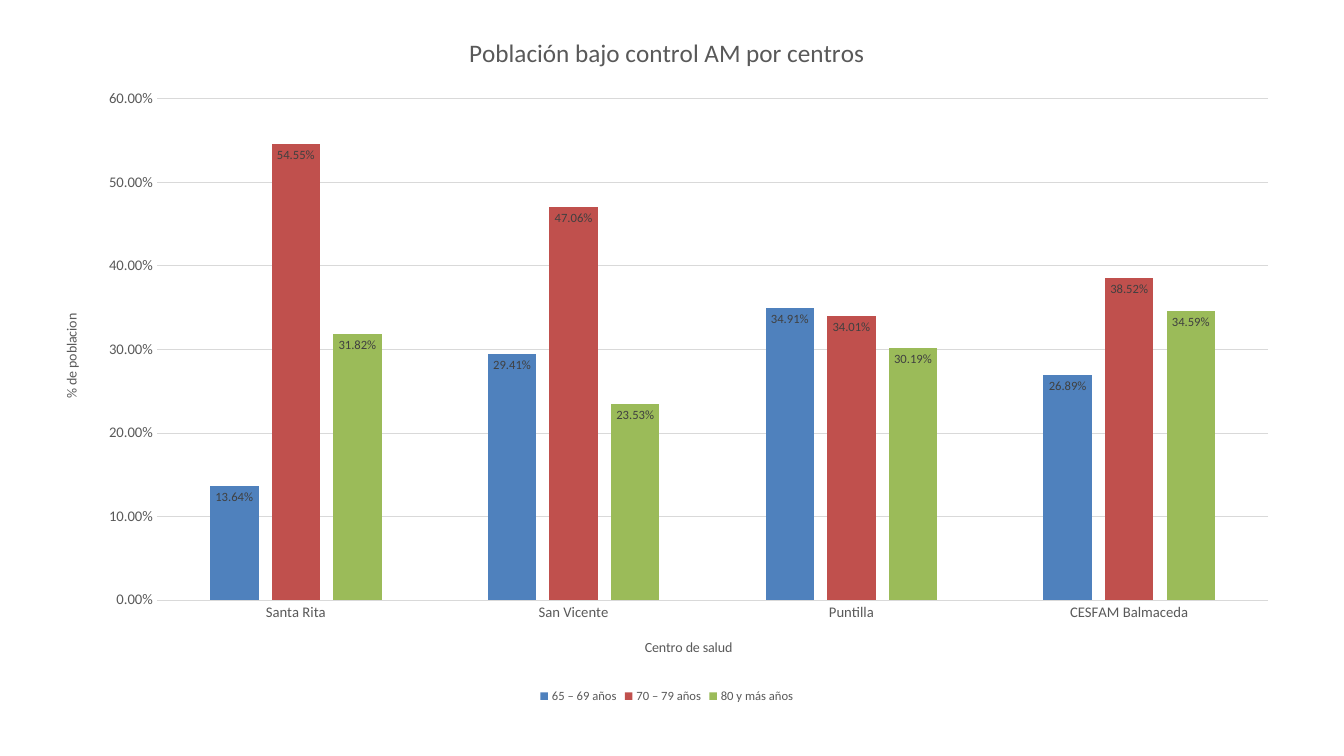
"""Build the slide charting the older adult population under control by health centre."""
from dataclasses import dataclass

from lxml.etree import SubElement
from pptx import Presentation
from pptx.chart.chart import Chart
from pptx.chart.data import CategoryChartData
from pptx.dml.color import RGBColor
from pptx.enum.chart import (
    XL_CHART_TYPE as ChartType,
    XL_LABEL_POSITION as LabelPosition,
    XL_LEGEND_POSITION as LegendPosition,
    XL_TICK_MARK as TickMark,
)
from pptx.oxml.ns import qn
from pptx.text.text import Font, TextFrame
from pptx.util import Cm, Pt

BLUE = RGBColor(0x4F, 0x81, 0xBD)
RED = RGBColor(0xC0, 0x50, 0x4D)
GREEN = RGBColor(0x9B, 0xBB, 0x59)
BLACK = RGBColor(0x00, 0x00, 0x00)
DARK_GREY = RGBColor(0x40, 0x40, 0x40)
GREY = RGBColor(0x59, 0x59, 0x59)
LIGHT_GREY = RGBColor(0xD9, 0xD9, 0xD9)
TYPEFACE = "Calibri"
PERCENT = "0.00%"


@dataclass(frozen=True)
class AgeGroup:
    name: str
    shares: tuple[float, ...]
    color: RGBColor


CENTRES = ("Santa Rita", "San Vicente", "Puntilla", "CESFAM Balmaceda")
AGE_GROUPS = (
    AgeGroup("65 – 69 años", (0.1364, 0.2941, 0.3491, 0.2689), BLUE),
    AgeGroup("70 – 79 años", (0.5455, 0.4706, 0.3401, 0.3852), RED),
    AgeGroup("80 y más años", (0.3182, 0.2353, 0.3019, 0.3459), GREEN),
)
PLOT_AREA = {"x": 0.093, "y": 0.126, "w": 0.887, "h": 0.72}


def style_font(font: Font, size: float, color: RGBColor = GREY) -> None:
    """Apply the common typeface with a size and colour."""
    font.name = TYPEFACE
    font.size = Pt(size)
    font.bold = False
    font.color.rgb = color


def write_title(frame: TextFrame, text: str, size: float) -> None:
    """Write a chart or axis title as one run."""
    run = frame.paragraphs[0].add_run()
    run.text = text
    style_font(run.font, size)


def style_axes(chart: Chart) -> None:
    """Title and format both axes."""
    centres, shares = chart.category_axis, chart.value_axis
    for axis, title in ((centres, "Centro de salud"), (shares, "% de poblacion")):
        write_title(axis.axis_title.text_frame, title, 10)
        axis.major_tick_mark = axis.minor_tick_mark = TickMark.NONE
        style_font(axis.tick_labels.font, 10.5)
    shares.axis_title.text_frame._txBody.bodyPr.set("rot", "-5400000")
    shares.minimum_scale, shares.maximum_scale, shares.major_unit = 0, 0.6, 0.1
    shares.tick_labels.number_format = PERCENT
    shares.tick_labels.number_format_is_linked = False
    shares.format.line.fill.background()
    for line in (centres.format.line, shares.major_gridlines.format.line):
        line.color.rgb = LIGHT_GREY
        line.width = Pt(0.75)


def style_columns(chart: Chart) -> None:
    """Colour and label the columns of each age group."""
    plot = chart.plots[0]
    plot.gap_width, plot.overlap = 219, -27
    plot.vary_by_categories = False
    for group, series in zip(AGE_GROUPS, plot.series):
        series.format.fill.solid()
        series.format.fill.fore_color.rgb = group.color
        series.invert_if_negative = False
        labels = series.data_labels
        labels.show_value = True
        labels.position = LabelPosition.INSIDE_END
        labels.number_format = PERCENT
        labels.number_format_is_linked = False
        style_font(labels.font, 9, DARK_GREY)


def place_plot_area(chart: Chart) -> None:
    """Fix the inner plot area as fractions of the chart."""
    plot_area = chart._chartSpace.find(".//" + qn("c:plotArea"))
    layout = plot_area.find(qn("c:layout"))
    if layout is None:
        layout = SubElement(plot_area, qn("c:layout"))
        plot_area.insert(0, layout)
    manual = SubElement(layout, qn("c:manualLayout"))
    settings = {"layoutTarget": "inner", "xMode": "edge", "yMode": "edge", **PLOT_AREA}
    for tag, value in settings.items():
        SubElement(manual, qn(f"c:{tag}")).set("val", str(value))


def main() -> None:
    """Create and save the slide."""
    deck = Presentation()
    deck.slide_width, deck.slide_height = Cm(33.87), Cm(19.05)
    slide = deck.slides.add_slide(deck.slide_layouts[6])

    population = CategoryChartData(number_format=PERCENT)
    population.categories = CENTRES
    for group in AGE_GROUPS:
        population.add_series(group.name, group.shares)
    chart = slide.shapes.add_chart(
        ChartType.COLUMN_CLUSTERED, Cm(1.02), Cm(0.28), Cm(31.57), Cm(17.55), population
    ).chart

    style_font(chart.font, 10, BLACK)
    write_title(chart.chart_title.text_frame, "Población bajo control AM por centros", 18)
    chart.chart_title.include_in_layout = False
    chart.has_legend = True
    chart.legend.position = LegendPosition.BOTTOM
    chart.legend.include_in_layout = False
    style_font(chart.legend.font, 9)
    style_axes(chart)
    style_columns(chart)
    place_plot_area(chart)
    deck.save("out.pptx")


if __name__ == "__main__":
    main()
